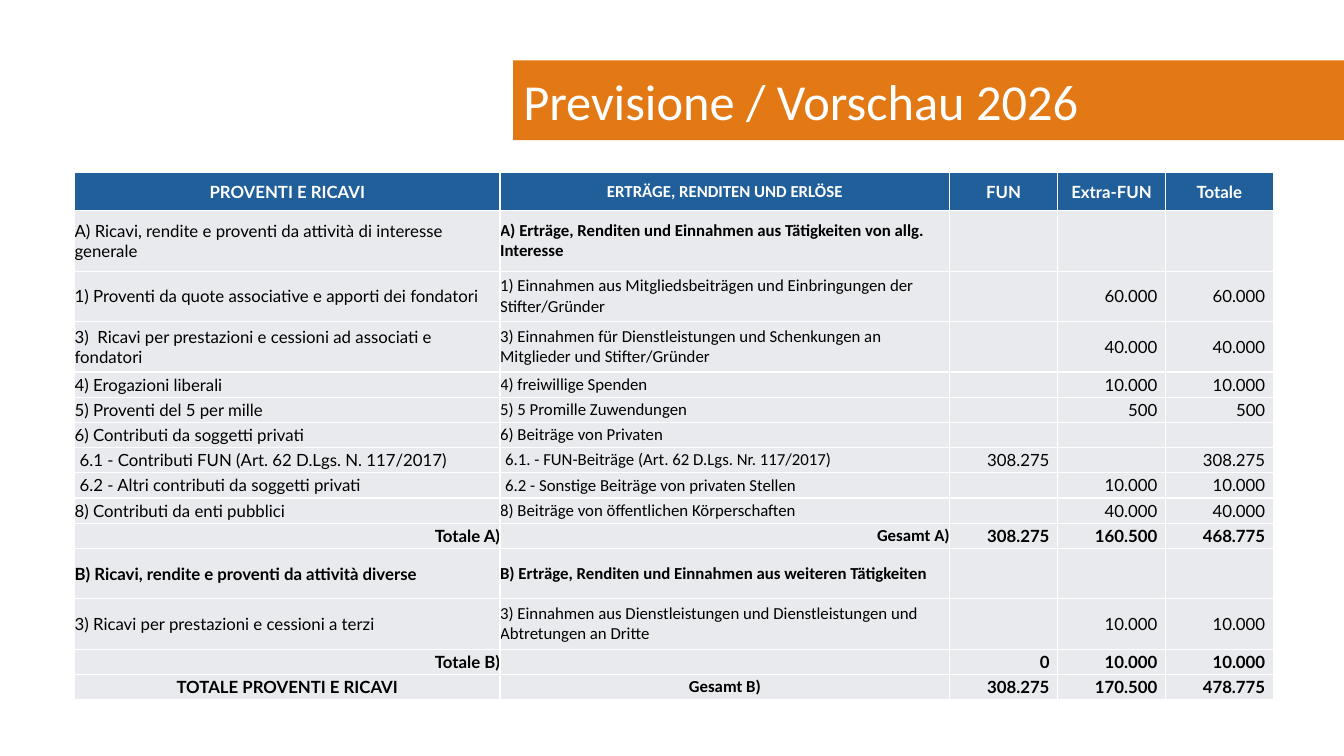
from lxml import etree
from pptx import Presentation
from pptx.dml.color import RGBColor
from pptx.enum import shapes, text
from pptx.oxml import ns
from pptx.util import Inches, Pt

COLORS = {"band": "E37915", "head": "215F9A", "cell": "E8EAED",
          "white": "FFFFFF", "black": "000000"}
ALIGN = {"l": text.PP_ALIGN.LEFT, "c": text.PP_ALIGN.CENTER,
         "r": text.PP_ALIGN.RIGHT}
COLS = [4.22, 4.46, 1.07, 1.07, 1.07]
FONTS = ["Lato", "Calibri", "Lato", "Lato", "Lato"]
GAP = 0.08

# Each row: height, style, then the five cell texts.
ROWS = [
    (0.38, "head", "PROVENTI E RICAVI", "ERTRÄGE, RENDITEN UND ERLÖSE",
     "FUN", "Extra-FUN", "Totale"),
    (0.6, "part", "A) Ricavi, rendite e proventi da attività di interesse generale",
     "A) Erträge, Renditen und Einnahmen aus Tätigkeiten von allg. Interesse",
     "", "", ""),
    (0.5, "item", "1) Proventi da quote associative e apporti dei fondatori",
     "1) Einnahmen aus Mitgliedsbeiträgen und Einbringungen der Stifter/Gründer",
     "", "60.000", "60.000"),
    (0.5, "item", "3)  Ricavi per prestazioni e cessioni ad associati e fondatori",
     "3) Einnahmen für Dienstleistungen und Schenkungen an Mitglieder und Stifter/Gründer",
     "", "40.000", "40.000"),
    (0.25, "item", "4) Erogazioni liberali", "4) freiwillige Spenden",
     "", "10.000", "10.000"),
    (0.25, "item", "5) Proventi del 5 per mille", "5) 5 Promille Zuwendungen",
     "", "500", "500"),
    (0.25, "item", "6) Contributi da soggetti privati", "6) Beiträge von Privaten",
     "", "", ""),
    (0.25, "sub", "6.1 - Contributi FUN (Art. 62 D.Lgs. N. 117/2017)",
     "6.1. - FUN-Beiträge (Art. 62 D.Lgs. Nr. 117/2017)",
     "308.275", "", "308.275"),
    (0.25, "sub", "6.2 - Altri contributi da soggetti privati",
     "6.2 - Sonstige Beiträge von privaten Stellen", "", "10.000", "10.000"),
    (0.25, "item", "8) Contributi da enti pubblici",
     "8) Beiträge von öffentlichen Körperschaften", "", "40.000", "40.000"),
    (0.25, "sum", "Totale A)", "Gesamt A)", "308.275", "160.500", "468.775"),
    (0.5, "bold", "B) Ricavi, rendite e proventi da attività diverse",
     "B) Erträge, Renditen und Einnahmen aus weiteren Tätigkeiten", "", "", ""),
    (0.5, "item", "3) Ricavi per prestazioni e cessioni a terzi",
     "3) Einnahmen aus Dienstleistungen und Dienstleistungen und Abtretungen an Dritte",
     "", "10.000", "10.000"),
    (0.25, "sum", "Totale B)", "", "0", "10.000", "10.000"),
    (0.25, "all", "TOTALE PROVENTI E RICAVI", "Gesamt B)",
     "308.275", "170.500", "478.775"),
]


def paint(fill, name):
    """Give a solid fill one of the named colours."""
    fill.solid()
    fill.fore_color.rgb = RGBColor.from_string(COLORS[name])


def write(frame, words, size=12, font="Lato", color="black", bold=False,
          align="l", line=None):
    """Write one formatted paragraph into a text frame."""
    para = frame.paragraphs[0]
    para.alignment = ALIGN[align]
    if line:
        para.line_spacing = line
    if not words:
        etree.SubElement(para._p, ns.qn("a:endParaRPr"), sz=str(size * 100))
        return
    run = para.add_run()
    run.text = words
    run.font.size = Pt(size)
    run.font.name = font
    run.font.bold = bold
    run.font.color.rgb = RGBColor.from_string(COLORS[color])


def rule(cell):
    """Draw thin white borders around a table cell."""
    props = cell._tc.get_or_add_tcPr()
    for side in ("lnL", "lnR", "lnT", "lnB"):
        edge = etree.SubElement(props, ns.qn("a:" + side), w=str(Pt(1)))
        solid = etree.SubElement(edge, ns.qn("a:solidFill"))
        etree.SubElement(solid, ns.qn("a:srgbClr"), val=COLORS["white"])


def fill_cell(cell, words, kind, col):
    """Format one cell by its row style and column."""
    head, number = kind == "head", col > 1
    rule(cell)
    paint(cell.fill, "head" if head else "cell")
    cell.vertical_anchor = text.MSO_ANCHOR.MIDDLE
    cell.margin_top = cell.margin_bottom = 0
    cell.margin_left = Inches(0.05 if kind == "sub" and not number else 0)
    cell.margin_right = Inches(GAP if number and not head else 0)
    if head or (kind == "all" and not number):
        align = "c"
    else:
        align = "r" if number or kind == "sum" else "l"
    bold = kind in ("head", "bold", "sum", "all") or (kind == "part" and col == 1)
    write(cell.text_frame, words, font=FONTS[col], bold=bold, align=align,
          color="white" if head else "black")


def add_title(slide, left, top, width, height):
    """Place the coloured band with the slide title over it."""
    band = slide.shapes.add_shape(
        shapes.MSO_SHAPE.RECTANGLE, Inches(left), Inches(top),
        Inches(width), Inches(height))
    band.shadow.inherit = False
    paint(band.fill, "band")
    band.line.fill.background()
    title = slide.shapes.title
    title.left, title.top = Inches(left), Inches(top + 0.08)
    title.width, title.height = Inches(7.88), Inches(height - 0.08)
    frame = title.text_frame
    frame.word_wrap = True
    frame.vertical_anchor = text.MSO_ANCHOR.MIDDLE
    write(frame, "Previsione / Vorschau 2026", size=36, font="Calibri",
          color="white", line=0.9)
    slide.shapes._spTree.append(title._element)


def add_grid(slide, left, top, width, height):
    """Place the budget table in the given box."""
    grid = slide.shapes.add_table(
        len(ROWS), len(COLS), Inches(left), Inches(top),
        Inches(width), Inches(height)).table
    grid.first_row = grid.horz_banding = False
    for col, wide in zip(grid.columns, COLS):
        col.width = Inches(wide)
    for line, (tall, kind, *words) in zip(grid.rows, ROWS):
        line.height = Inches(tall)
        for col, (cell, word) in enumerate(zip(line.cells, words)):
            fill_cell(cell, word, kind, col)


def main():
    """Build the slide and save it."""
    deck = Presentation()
    deck.slide_width, deck.slide_height = Inches(13.33), Inches(7.5)
    slide = deck.slides.add_slide(deck.slide_layouts[5])
    add_title(slide, 5.09, 0.6, 8.24, 0.79)
    add_grid(slide, 0.74, 1.71, sum(COLS), sum(row[0] for row in ROWS))
    deck.save("out.pptx")


if __name__ == "__main__":
    main()
